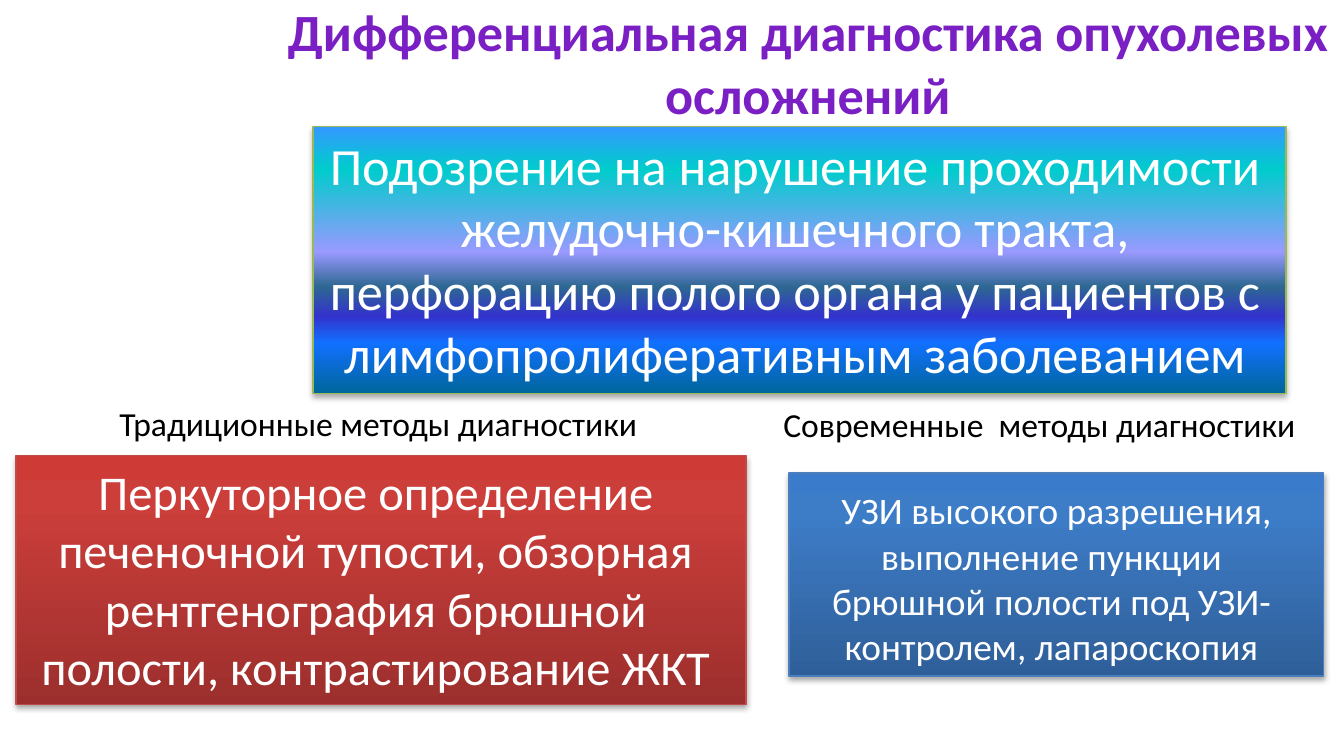
"""Build a slide on the differential diagnosis of tumour complications."""
from pptx import Presentation
from pptx.dml.color import RGBColor
from pptx.enum.shapes import MSO_SHAPE as SHAPE
from pptx.enum.text import MSO_ANCHOR as ANCHOR, PP_ALIGN as ALIGN
from pptx.oxml import parse_xml
from pptx.oxml.ns import nsdecls, qn
from pptx.util import Inches, Pt


def rgb(color):
    return RGBColor.from_string(color)


def add_run(p, text, size, color, bold=False):
    r = p.add_run()
    r.text = text
    r.font.name = "Calibri"
    r.font.size = Pt(size)
    r.font.bold = bold
    r.font.color.rgb = rgb(color)


prs = Presentation()
prs.slide_width = Inches(10)
prs.slide_height = Inches(10 * 9 / 16)
slide = prs.slides.add_slide(prs.slide_layouts[6])

title = slide.shapes.add_textbox(Inches(2.02), Inches(0), Inches(7.98), Inches(0.92))
tf = title.text_frame
tf.word_wrap = True
tf.vertical_anchor = ANCHOR.MIDDLE
p = tf.paragraphs[0]
p.alignment = ALIGN.CENTER
add_run(p, "Дифференциальная диагностика опухолевых осложнений", 28, "791FC3", True)

boxes = [
    ((2.33, 0.94, 7.24, 1.99), 90, "98B955",
     [(0, "3399FF"), (16, "00CCCC"), (47, "9999FF"), (60, "2E6792"),
      (71, "3333CC"), (81, "1170FF"), (100, "006699")],
     [("Подозрение на нарушение проходимости желудочно-кишечного тракта, "
       "перфорацию полого органа у пациентов с лимфопролиферативным заболеванием", 28)]),
    ((0.12, 3.39, 5.43, 1.85), 270, "BF4C48",
     [(0, "9C2F2D"), (80, "CB3E3A"), (100, "CE3B37")],
     [("Перкуторное определение печеночной тупости, обзорная рентгенография "
       "брюшной полости, контрастирование ЖКТ", 26)]),
    ((5.87, 3.52, 3.98, 1.51), 270, "4B7EBC",
     [(0, "2F5F99"), (80, "3D7CC7"), (100, "3A7CCB")],
     [(" ", 24),
      ("УЗИ высокого разрешения, выполнение пункции брюшной полости "
       "под УЗИ-контролем, лапароскопия", 20)]),
]
for place, angle, border, stops, runs in boxes:
    s = slide.shapes.add_shape(SHAPE.RECTANGLE, *map(Inches, place))
    s.line.color.rgb = rgb(border)
    s.line.width = Pt(0.75)
    s.shadow.inherit = False
    spPr = s._element.spPr
    gs = "".join(f'<a:gs pos="{pos * 1000}"><a:srgbClr val="{color}"/></a:gs>'
                 for pos, color in stops)
    spPr.find(qn("a:prstGeom")).addnext(parse_xml(
        f'<a:gradFill {nsdecls("a")} rotWithShape="1"><a:gsLst>{gs}</a:gsLst>'
        f'<a:lin ang="{angle * 60000}" scaled="0"/></a:gradFill>'))
    spPr.find(qn("a:effectLst")).append(parse_xml(
        f'<a:outerShdw {nsdecls("a")} blurRad="{Pt(3.1)}" dist="{Pt(1.8)}" '
        'dir="5400000" rotWithShape="0"><a:srgbClr val="000000">'
        '<a:alpha val="35000"/></a:srgbClr></a:outerShdw>'))
    tf = s.text_frame
    tf.word_wrap = True
    tf.vertical_anchor = ANCHOR.TOP
    tf.margin_right = Inches(0.17)
    p = tf.paragraphs[0]
    p.alignment = ALIGN.CENTER
    for text, size in runs:
        add_run(p, text, size, "FFFFFF")

labels = [
    ("Традиционные методы диагностики", 0.79, 2.95, 4.16),
    ("Современные  методы диагностики", 5.73, 2.96, 4.12),
]
for text, left, top, width in labels:
    s = slide.shapes.add_textbox(Inches(left), Inches(top), Inches(width), Inches(0.4))
    s.text_frame.word_wrap = False
    add_run(s.text_frame.paragraphs[0], text, 18, "000000")

prs.save("out.pptx")
